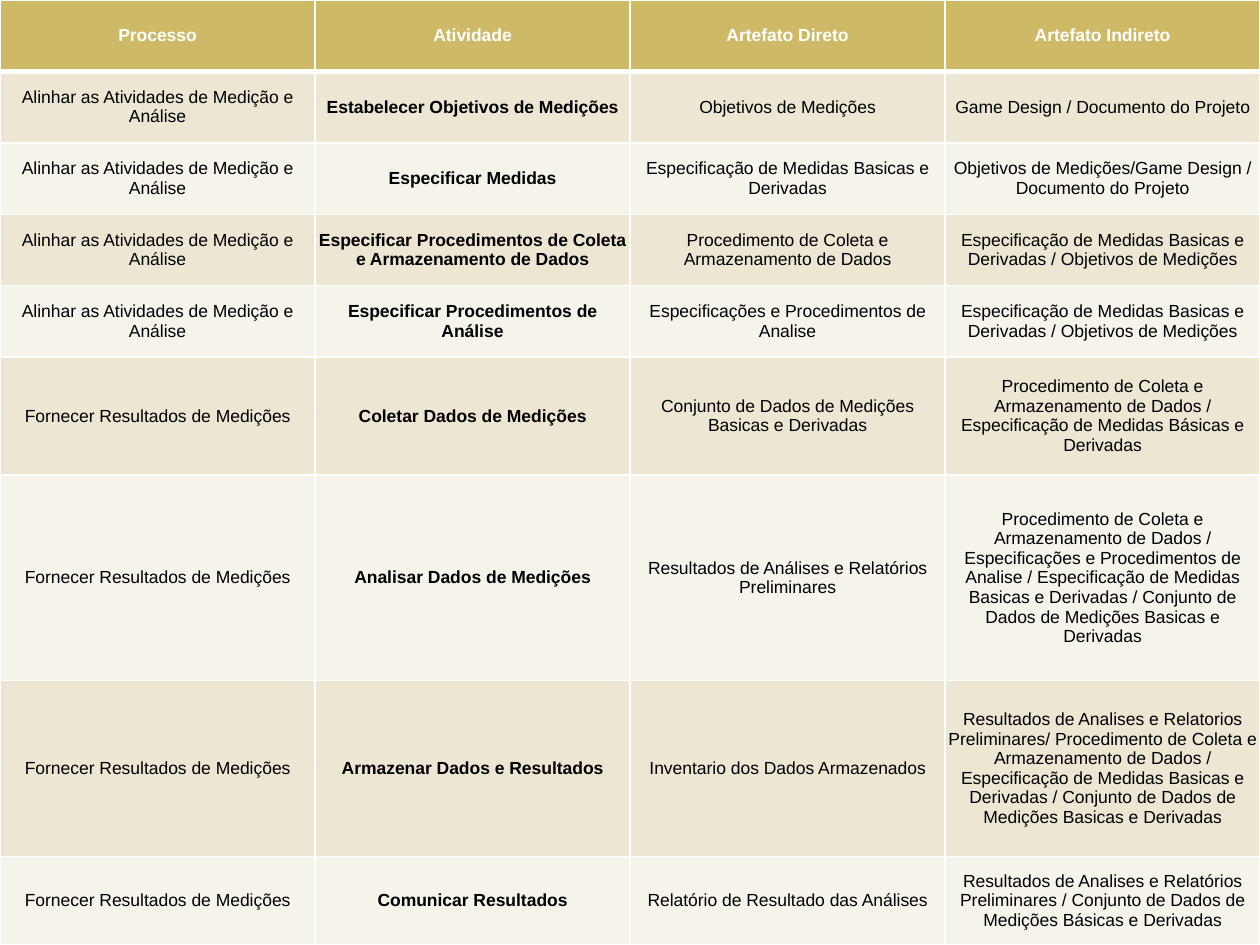
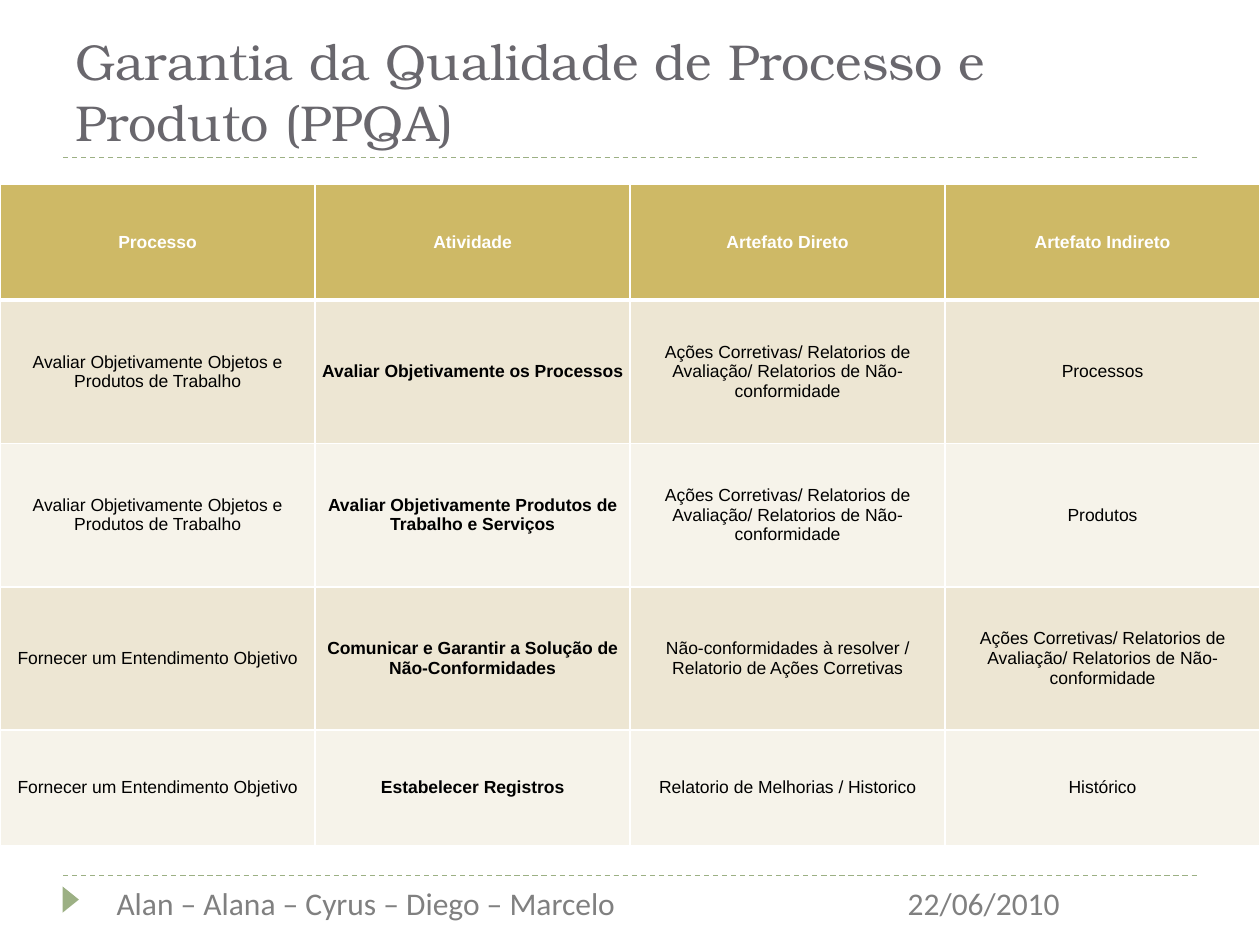
"""Builds two slides with tables of processes, activities and artefacts."""
from lxml.etree import SubElement as Sub
from pptx import Presentation
from pptx.dml.color import RGBColor as Rgb
from pptx.enum.dml import MSO_LINE as Dash
from pptx.enum.shapes import MSO_CONNECTOR as Conn, MSO_SHAPE as Form
from pptx.enum.text import MSO_ANCHOR as Anchor, PP_ALIGN as Align
from pptx.oxml.ns import qn
from pptx.util import Cm, Pt

HUE = {"head": "CEB966", "dark": "EDE6D3", "light": "F6F3EA", "white": "FFFFFF",
       "black": "000000", "title": "69676D", "foot": "808080", "green": "9CB084"}


def write(frame, text, size=10, font="Arial", hue="black", bold=False, align=Align.LEFT, tab=None):
    """Put formatted text in a frame, with an optional tab stop."""
    frame.word_wrap = True
    para = frame.paragraphs[0]
    para.text = text
    para.alignment = align
    if tab:
        stops = Sub(para._p.get_or_add_pPr(), qn("a:tabLst"))
        Sub(stops, qn("a:tab"), pos=str(tab), algn="l")
    for run in para.runs:
        run.font.size = Pt(size)
        run.font.name = font
        run.font.bold = bold
        run.font.color.rgb = Rgb.from_string(HUE[hue])


def grid(slide, top, tall, rows):
    """Draw a banded table under the shared header row."""
    rows = [HEAD] + rows
    table = slide.shapes.add_table(len(rows), 4, 0, top, WIDE, sum(tall)).table
    for col in table.columns:
        col.width = WIDE // 4
    for r, texts in enumerate(rows):
        table.rows[r].height = tall[r]
        for c, text in enumerate(texts):
            cell = table.cell(r, c)
            cell.margin_left = cell.margin_right = cell.margin_top = cell.margin_bottom = 0
            cell.vertical_anchor = Anchor.MIDDLE
            for side in "LRTB":
                thick = 3 if (r, side) in ((0, "B"), (1, "T")) else 1
                edge = Sub(cell._tc.get_or_add_tcPr(), qn("a:ln" + side), w=str(Pt(thick)))
                Sub(Sub(edge, qn("a:solidFill")), qn("a:srgbClr"), val=HUE["white"])
            band = "head" if r == 0 else "dark" if r % 2 else "light"
            cell.fill.solid()
            cell.fill.fore_color.rgb = Rgb.from_string(HUE[band])
            write(cell.text_frame, text, hue="black" if r else "white",
                  bold=r == 0 or c == 1, align=Align.CENTER)


HEAD = ("Processo", "Atividade", "Artefato Direto", "Artefato Indireto")
ALIGN = "Alinhar as Atividades de Medição e Análise"
GIVE = "Fornecer Resultados de Medições"
RATE = "Avaliar Objetivamente Objetos e Produtos de Trabalho"
GRASP = "Fornecer um Entendimento Objetivo"
FIXES = "Ações Corretivas/ Relatorios de Avaliação/ Relatorios de Não-conformidade"
GOALS = "Especificação de Medidas Basicas e Derivadas / Objetivos de Medições"

deck = Presentation()
WIDE = deck.slide_width = Cm(25.4)
deck.slide_height = Cm(19.05)
blank = deck.slide_layouts[6]
first, second = [deck.slides.add_slide(blank) for _ in range(2)]

decor = []
for y in (Cm(17.65), Cm(3.17)):
    rule = first.shapes.add_connector(Conn.STRAIGHT, Cm(1.27), y, Cm(24.13), y)
    rule.line.color.rgb = Rgb.from_string(HUE["green"])
    rule.line.width = Pt(0.75)
    rule.line.dash_style = Dash.DASH
    Sub(rule._element.spPr, qn("a:effectLst"))
    decor.append(rule)

mark = first.shapes.add_shape(Form.ISOSCELES_TRIANGLE, Cm(1.16), Cm(17.97), Cm(0.53), Cm(0.33))
mark.rotation = 90
mark.shadow.inherit = False
mark.fill.solid()
mark.fill.fore_color.rgb = Rgb.from_string(HUE["green"])
mark.line.fill.background()
decor.append(mark)

for item in decor:
    blank.shapes._spTree.append(item._element)

grid(first, 0, [Cm(1.44)] * 5 + [Cm(2.38), Cm(4.14), Cm(3.55), Cm(1.78)], [
    (ALIGN, "Estabelecer Objetivos de Medições", "Objetivos de Medições",
     "Game Design / Documento do Projeto"),
    (ALIGN, "Especificar Medidas", "Especificação de Medidas Basicas e Derivadas",
     "Objetivos de Medições/Game Design / Documento do Projeto"),
    (ALIGN, "Especificar Procedimentos de Coleta e Armazenamento de Dados",
     "Procedimento de Coleta e Armazenamento de Dados", GOALS),
    (ALIGN, "Especificar Procedimentos de Análise",
     "Especificações e Procedimentos de Analise", GOALS),
    (GIVE, "Coletar Dados de Medições", "Conjunto de Dados de Medições Basicas e Derivadas",
     "Procedimento de Coleta e Armazenamento de Dados / "
     "Especificação de Medidas Básicas e Derivadas"),
    (GIVE, "Analisar Dados de Medições", "Resultados de Análises e Relatórios Preliminares",
     "Procedimento de Coleta e Armazenamento de Dados / "
     "Especificações e Procedimentos de Analise / Especificação de Medidas Basicas e Derivadas / "
     "Conjunto de Dados de Medições Basicas e Derivadas"),
    (GIVE, "Armazenar Dados e Resultados", "Inventario dos Dados Armazenados",
     "Resultados de Analises e Relatorios Preliminares/ "
     "Procedimento de Coleta e Armazenamento de Dados / "
     "Especificação de Medidas Basicas e Derivadas / "
     "Conjunto de Dados de Medições Basicas e Derivadas"),
    (GIVE, "Comunicar Resultados", "Relatório de Resultado das Análises",
     "Resultados de Analises e Relatórios Preliminares / "
     "Conjunto de Dados de Medições Básicas e Derivadas"),
])

title = second.shapes.add_textbox(Cm(1.27), Cm(0.44), Cm(22.86), Cm(2.74)).text_frame
title.vertical_anchor = Anchor.BOTTOM
write(title, "Garantia da Qualidade de Processo e Produto (PPQA)",
      size=28.8, font="TeX Gyre Bonum", hue="title")

grid(second, Cm(3.72), [Cm(2.33)] + [Cm(2.89)] * 3 + [Cm(2.33)], [
    (RATE, "Avaliar Objetivamente os Processos", FIXES, "Processos"),
    (RATE, "Avaliar Objetivamente Produtos de Trabalho e Serviços", FIXES, "Produtos"),
    (GRASP, "Comunicar e Garantir a Solução de Não-Conformidades",
     "Não-conformidades à resolver / Relatorio de Ações Corretivas", FIXES),
    (GRASP, "Estabelecer Registros", "Relatorio de Melhorias / Historico", "Histórico"),
])

foot = second.shapes.add_textbox(Cm(2.1), Cm(17.7), Cm(22.2), Cm(1.02)).text_frame
write(foot, "Alan – Alana – Cyrus – Diego – Marcelo\t22/06/2010",
      size=18, font="Calibri", hue="foot", tab=Cm(15.95))

deck.save("out.pptx")
